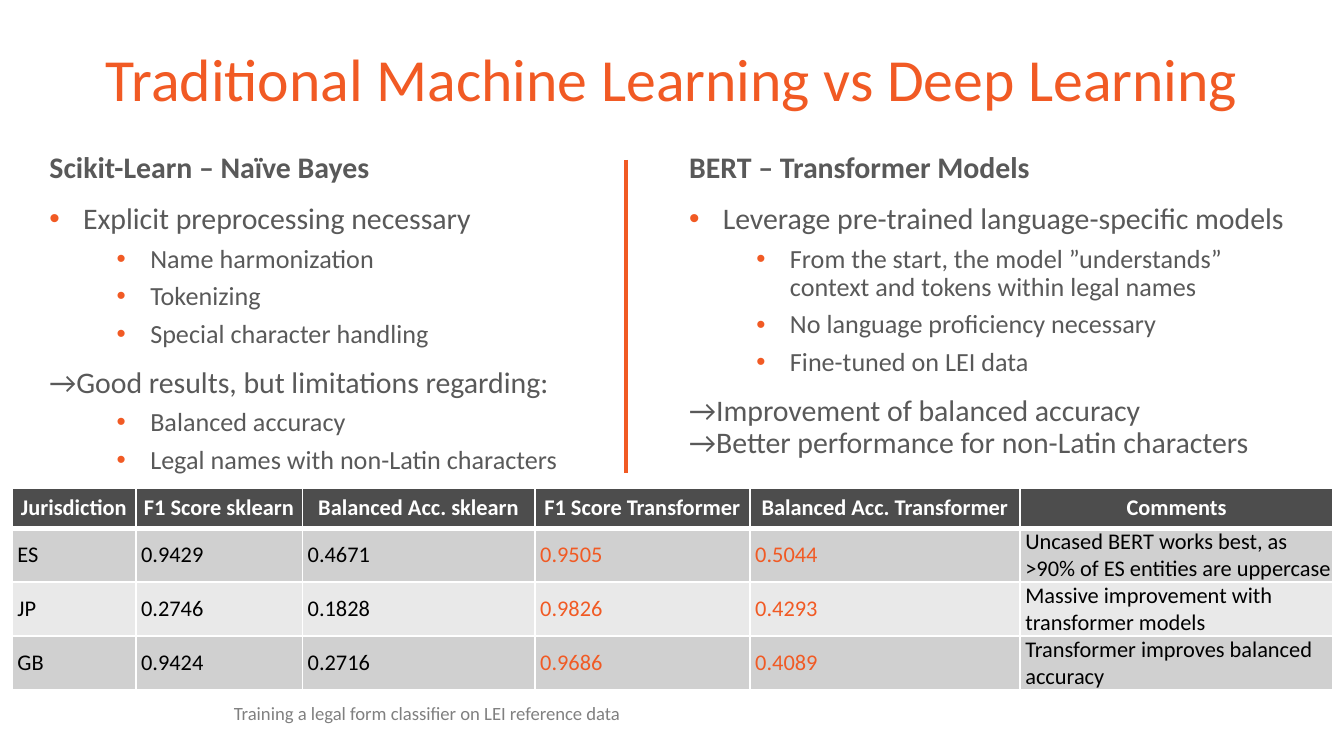
"""Build the slide comparing traditional machine learning with deep learning."""
from lxml.etree import SubElement
from pptx import Presentation
from pptx.dml.color import RGBColor
from pptx.enum.shapes import MSO_CONNECTOR
from pptx.enum.text import MSO_ANCHOR, PP_ALIGN
from pptx.oxml.ns import qn
from pptx.util import Inches, Pt

ORANGE = RGBColor(0xF1, 0x5A, 0x24)
TEXT_GREY = RGBColor(0x59, 0x59, 0x59)
FOOTER_GREY = RGBColor(0x80, 0x80, 0x80)
HEADER_GREY = RGBColor(0x4D, 0x4D, 0x4D)
BAND_GREYS = RGBColor(0xD0, 0xD0, 0xD0), RGBColor(0xE9, 0xE9, 0xE9)
WHITE = RGBColor(0xFF, 0xFF, 0xFF)
BLACK = RGBColor(0, 0, 0)
FONT = "Calibri"

TITLE = "Traditional Machine Learning vs Deep Learning"
FOOTER = "Training a legal form classifier on LEI reference data"
SKLEARN = [
    ("heading", "Scikit-Learn – Naïve Bayes"),
    ("point", "Explicit preprocessing necessary"),
    ("detail", "Name harmonization"),
    ("detail", "Tokenizing"),
    ("detail", "Special character handling"),
    ("result", "→Good results, but limitations regarding:"),
    ("detail", "Balanced accuracy"),
    ("detail", "Legal names with non-Latin characters"),
]
BERT = [
    ("heading", "BERT – Transformer Models"),
    ("point", "Leverage pre-trained language-specific models"),
    ("detail", "From the start, the model ”understands” context and tokens within legal names"),
    ("detail", "No language proficiency necessary"),
    ("detail", "Fine-tuned on LEI data"),
    ("result", "→Improvement of balanced accuracy\n→Better performance for non-Latin characters"),
]
SCORES = [
    ("Jurisdiction", "F1 Score sklearn", "Balanced Acc. sklearn",
     "F1 Score Transformer", "Balanced Acc. Transformer", "Comments"),
    ("ES", "0.9429", "0.4671", "0.9505", "0.5044",
     "Uncased BERT works best, as >90% of ES entities are uppercase"),
    ("JP", "0.2746", "0.1828", "0.9826", "0.4293",
     "Massive improvement with transformer models"),
    ("GB", "0.9424", "0.2716", "0.9686", "0.4089",
     "Transformer improves balanced accuracy"),
]
COLUMN_WIDTHS = 0.92, 1.24, 1.73, 1.6, 2.01, 2.33
ROW_HEIGHTS = 0.3, 0.4, 0.4, 0.4
TRANSFORMER_COLUMNS = 3, 4
LEVELS = {
    "heading": dict(size=16, before=10, indent=0, bold=True),
    "point": dict(size=16, before=10, indent=0.25, bold=False),
    "detail": dict(size=14, before=5, indent=0.75, bold=False),
    "result": dict(size=16, before=10, indent=0, bold=False),
}


def format_runs(paragraph, size, color, bold=False):
    for run in paragraph.runs:
        run.font.name = FONT
        run.font.size = Pt(size)
        run.font.bold = bold
        run.font.color.rgb = color
    for line_break in paragraph._p.findall(qn("a:br")):
        SubElement(line_break, qn("a:rPr"), sz=str(size * 100))


def add_text_frame(slide, left, top, width, height, anchor=MSO_ANCHOR.TOP):
    frame = slide.shapes.add_textbox(*map(Inches, (left, top, width, height))).text_frame
    frame.word_wrap = True
    frame.vertical_anchor = anchor
    return frame


def add_line_of_text(frame, text, size, color):
    frame.text = text
    frame.paragraphs[0].line_spacing = 0.9
    format_runs(frame.paragraphs[0], size, color)


def add_bullet(paragraph, indent):
    properties = paragraph._p.get_or_add_pPr()
    properties.set("marL", str(Inches(indent)))
    properties.set("indent", str(Inches(-0.25)))
    bullet_color = SubElement(properties, qn("a:buClr"))
    SubElement(bullet_color, qn("a:srgbClr"), val=str(ORANGE))
    SubElement(properties, qn("a:buFont"), typeface="Arial")
    SubElement(properties, qn("a:buChar"), char="•")


def add_approach(slide, left, entries):
    frame = add_text_frame(slide, left, 1.09, 4.67, 3.95)
    for position, (kind, text) in enumerate(entries):
        level = LEVELS[kind]
        paragraph = frame.add_paragraph() if position else frame.paragraphs[0]
        paragraph.text = text
        paragraph.line_spacing = 0.9
        if position:
            paragraph.space_before = Pt(level["before"])
        if level["indent"]:
            paragraph.level = int(kind == "detail")
            add_bullet(paragraph, level["indent"])
        format_runs(paragraph, level["size"], TEXT_GREY, level["bold"])


def add_borders(cell, bottom_width):
    properties = cell._tc.get_or_add_tcPr()
    for side, width in (("L", 1), ("R", 1), ("T", 1), ("B", bottom_width)):
        border = SubElement(properties, qn(f"a:ln{side}"), w=str(Pt(width)))
        fill = SubElement(border, qn("a:solidFill"))
        SubElement(fill, qn("a:srgbClr"), val=str(WHITE))


def add_scores(slide):
    table = slide.shapes.add_table(
        len(SCORES), len(COLUMN_WIDTHS), Inches(0.09), Inches(3.63),
        Inches(sum(COLUMN_WIDTHS)), Inches(sum(ROW_HEIGHTS))).table
    for column, width in zip(table.columns, COLUMN_WIDTHS):
        column.width = Inches(width)
    for row, height in zip(table.rows, ROW_HEIGHTS):
        row.height = Inches(height)
    for r, values in enumerate(SCORES):
        is_header = r == 0
        for c, value in enumerate(values):
            cell = table.cell(r, c)
            add_borders(cell, 3 if is_header else 1)
            cell.fill.solid()
            cell.fill.fore_color.rgb = HEADER_GREY if is_header else BAND_GREYS[(r - 1) % 2]
            cell.margin_left = Inches(0 if is_header else 0.04)
            cell.margin_right = cell.margin_top = cell.margin_bottom = 0
            cell.vertical_anchor = MSO_ANCHOR.MIDDLE
            paragraph = cell.text_frame.paragraphs[0]
            paragraph.text = value
            paragraph.alignment = PP_ALIGN.CENTER if is_header else PP_ALIGN.LEFT
            body_color = ORANGE if c in TRANSFORMER_COLUMNS else BLACK
            format_runs(paragraph, 12, WHITE if is_header else body_color, is_header)


def add_divider(slide):
    divider = slide.shapes.add_connector(
        MSO_CONNECTOR.STRAIGHT, Inches(4.66), Inches(1.19), Inches(4.66), Inches(3.52))
    divider.line.color.rgb = ORANGE
    divider.line.width = Pt(2.25)
    SubElement(divider._element.spPr, qn("a:effectLst"))


def main():
    presentation = Presentation()
    presentation.slide_width = Inches(10)
    presentation.slide_height = presentation.slide_width * 9 // 16
    slide = presentation.slides.add_slide(presentation.slide_layouts[6])

    title = add_text_frame(slide, 0.69, 0.3, 8.69, 0.63, MSO_ANCHOR.MIDDLE)
    add_line_of_text(title, TITLE, 32, ORANGE)
    add_approach(slide, 0.27, SKLEARN)
    footer = add_text_frame(slide, 1.74, 5.21, 3.03, 0.18, MSO_ANCHOR.BOTTOM)
    footer.margin_left = footer.margin_right = footer.margin_top = footer.margin_bottom = 0
    add_line_of_text(footer, FOOTER, 10, FOOTER_GREY)
    add_approach(slide, 5.03, BERT)
    add_scores(slide)
    add_divider(slide)
    presentation.save("out.pptx")


if __name__ == "__main__":
    main()
